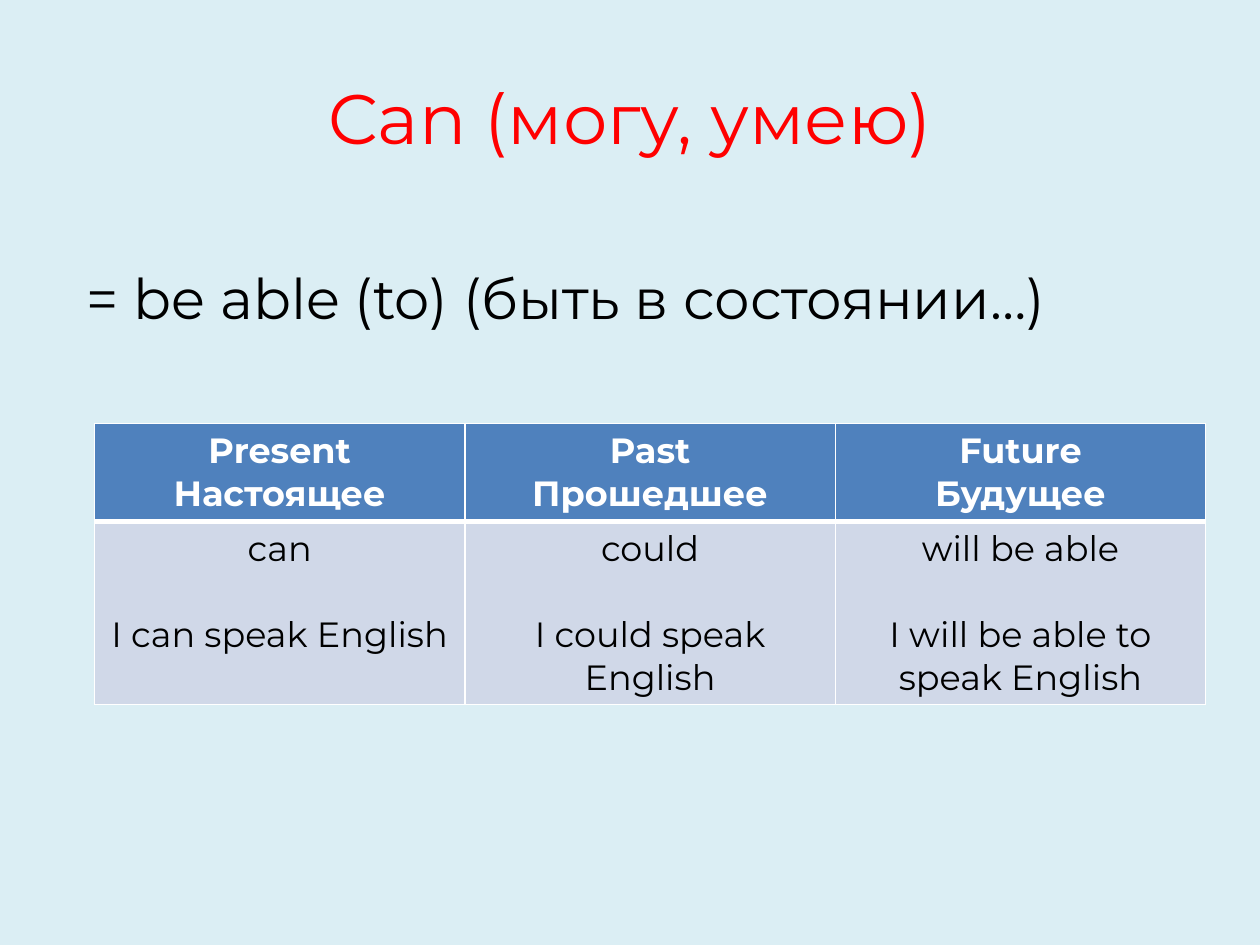
from lxml.etree import SubElement
from pptx import Presentation
from pptx.dml.color import RGBColor
from pptx.enum.text import MSO_ANCHOR, PP_ALIGN
from pptx.oxml.ns import qn
from pptx.util import Inches, Pt

FONT = "Montserrat"
TENSES = [
    (("Present", "Настоящее"), ("can", "I can speak English")),
    (("Past", "Прошедшее"), ("could", "I could speak English")),
    (("Future", "Будущее"), ("will be able", "I will be able to speak English")),
]


def rgb(value):
    """Turn a hex string into a colour."""
    return RGBColor.from_string(value)


def write(tf, *lines, size=20, color="000000", bold=False, align=PP_ALIGN.CENTER, gap=0):
    """Write lines as paragraphs, with a gap in points between them."""
    tf.word_wrap = True
    for i, line in enumerate(lines):
        p = tf.add_paragraph() if i else tf.paragraphs[0]
        p.alignment = align
        p.space_before = Pt(gap if i else 0)
        r = p.add_run()
        r.text = line
        r.font.name = FONT
        r.font.size = Pt(size)
        r.font.bold = bold
        r.font.color.rgb = rgb(color)


def add_text(slide, left, top, width, height, text, anchor=MSO_ANCHOR.TOP, **fmt):
    """Add a text box with one paragraph."""
    box = slide.shapes.add_textbox(Inches(left), Inches(top), Inches(width), Inches(height))
    box.text_frame.vertical_anchor = anchor
    write(box.text_frame, text, **fmt)


def style_cell(cell, fill, top=1, bottom=1):
    """Give a cell white borders and a solid fill."""
    tc_pr = cell._tc.get_or_add_tcPr()
    for side, width in (("L", 1), ("R", 1), ("T", top), ("B", bottom)):
        ln = SubElement(tc_pr, qn(f"a:ln{side}"), w=str(Pt(width)))
        SubElement(SubElement(ln, qn("a:solidFill")), qn("a:srgbClr"), val="FFFFFF")
    cell.fill.solid()
    cell.fill.fore_color.rgb = rgb(fill)


def add_tense_table(slide, left, top, col_width, row_heights):
    """Add the table with one column per tense."""
    table = slide.shapes.add_table(
        len(row_heights), len(TENSES), Inches(left), Inches(top),
        Inches(col_width * len(TENSES)), Inches(sum(row_heights))).table
    for row, height in zip(table.rows, row_heights):
        row.height = Inches(height)
    for col, (heading, example) in enumerate(TENSES):
        table.columns[col].width = Inches(col_width)
        head, body = table.cell(0, col), table.cell(1, col)
        style_cell(head, "4F81BD", bottom=3)
        write(head.text_frame, *heading, color="FFFFFF", bold=True)
        style_cell(body, "D0D8E8", top=3)
        write(body.text_frame, *example, gap=24.4)


def main():
    """Build the slide and save it."""
    prs = Presentation()
    prs.slide_width, prs.slide_height = Inches(10), Inches(7.5)
    slide = prs.slides.add_slide(prs.slide_layouts[6])
    slide.background.fill.solid()
    slide.background.fill.fore_color.rgb = rgb("DBEEF4")
    add_text(slide, 0.5, 0.3, 9, 1.25, "Can (могу, умею)",
             anchor=MSO_ANCHOR.MIDDLE, size=40, color="FF0000")
    add_text(slide, 0.59, 2.04, 8.91, 0.65, "= be able (to) (быть в состоянии…)",
             size=32, align=PP_ALIGN.LEFT)
    add_tense_table(slide, 0.75, 3.36, 2.94, (0.78, 1.45))
    prs.save("out.pptx")


if __name__ == "__main__":
    main()
